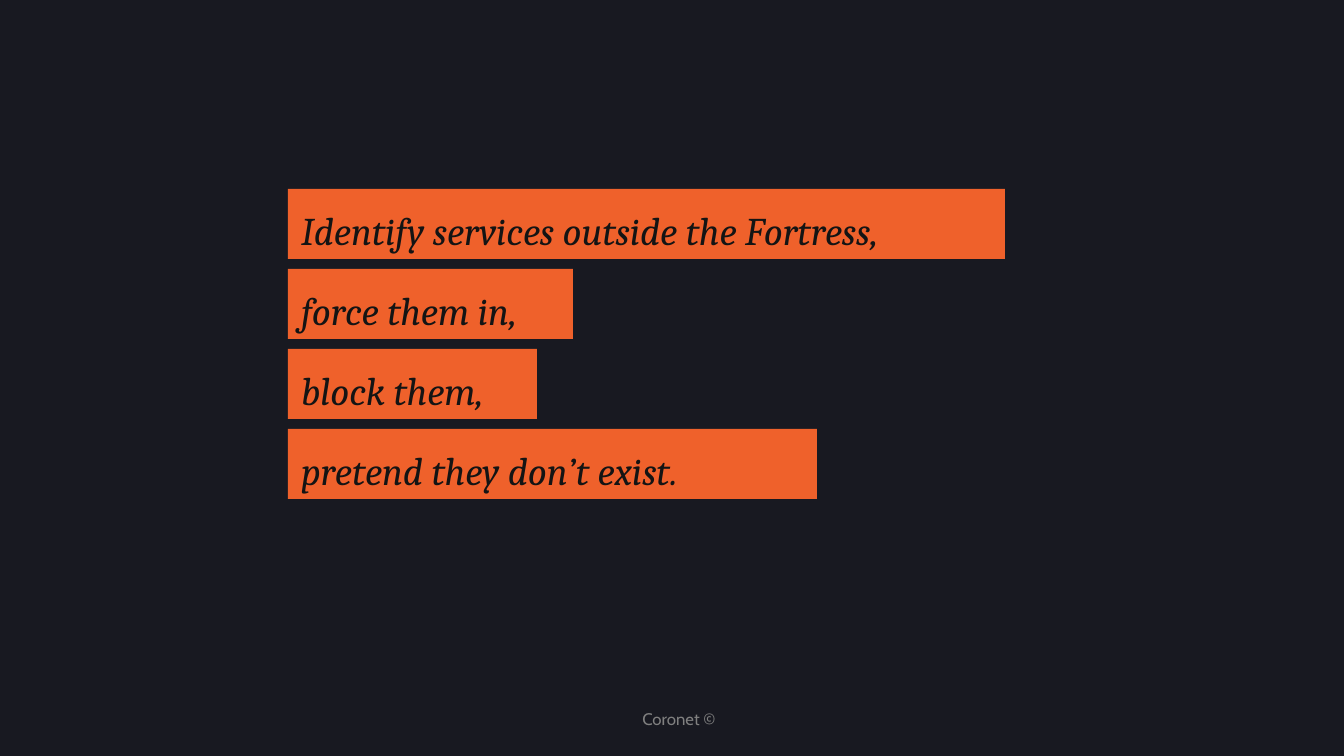
from pptx import Presentation
from pptx.dml.color import RGBColor
from pptx.enum.shapes import MSO_SHAPE
from pptx.enum.text import MSO_ANCHOR, PP_ALIGN
from pptx.util import Emu, Pt

SLIDE_WIDTH, SLIDE_HEIGHT = 1344, 756
SCALE = 12192000 / SLIDE_WIDTH
LEFT, TOP, PITCH, BAR_HEIGHT = 288, 189, 80, 70
BACKGROUND, ORANGE, INK, GREY = "181921", "EF612B", "141414", "808080"


def px(*lengths):
    return [Emu(round(length * SCALE)) for length in lengths]


def write(shapes, area, text, anchor, align, spacing, color, font_format):
    frame = shapes.add_textbox(*px(*area)).text_frame
    inset = px(5)[0]
    frame_format = {"word_wrap": True, "vertical_anchor": anchor,
                    "margin_left": inset, "margin_right": inset,
                    "margin_top": inset, "margin_bottom": inset}
    for key, value in frame_format.items():
        setattr(frame, key, value)
    line = frame.paragraphs[0]
    line.text = text
    line.alignment = align
    line.line_spacing = spacing
    for key, value in font_format.items():
        setattr(line.runs[0].font, key, value)
    line.runs[0].font.color.rgb = RGBColor.from_string(color)


deck = Presentation()
deck.slide_width, deck.slide_height = px(SLIDE_WIDTH, SLIDE_HEIGHT)
slide = deck.slides.add_slide(deck.slide_layouts[6])
slide.background.fill.solid()
slide.background.fill.fore_color.rgb = RGBColor.from_string(BACKGROUND)

write(slide.shapes, (633, 705, 92, 29), "Coronet ©", MSO_ANCHOR.BOTTOM,
      PP_ALIGN.CENTER, None, GREY, {"name": "Cabin", "size": Pt(12)})

advice = [
    ("Identify services outside the Fortress,", 717),
    ("force them in,", 285),
    ("block them,", 249),
    ("pretend they don’t exist.", 529),
]
for row, (phrase, width) in enumerate(advice):
    top = TOP + row * PITCH
    phrase_group = slide.shapes.add_group_shape()
    bar = phrase_group.shapes.add_shape(
        MSO_SHAPE.RECTANGLE, *px(LEFT, top, width, BAR_HEIGHT))
    bar.shadow.inherit = False
    bar.fill.solid()
    bar.fill.fore_color.rgb = RGBColor.from_string(ORANGE)
    bar.line.fill.background()
    write(phrase_group.shapes, (LEFT + 8, top - 18, 707, 88), phrase,
          MSO_ANCHOR.MIDDLE, PP_ALIGN.LEFT, Pt(55), INK,
          {"name": "Cambria", "size": Pt(28), "italic": True})

deck.save("out.pptx")
